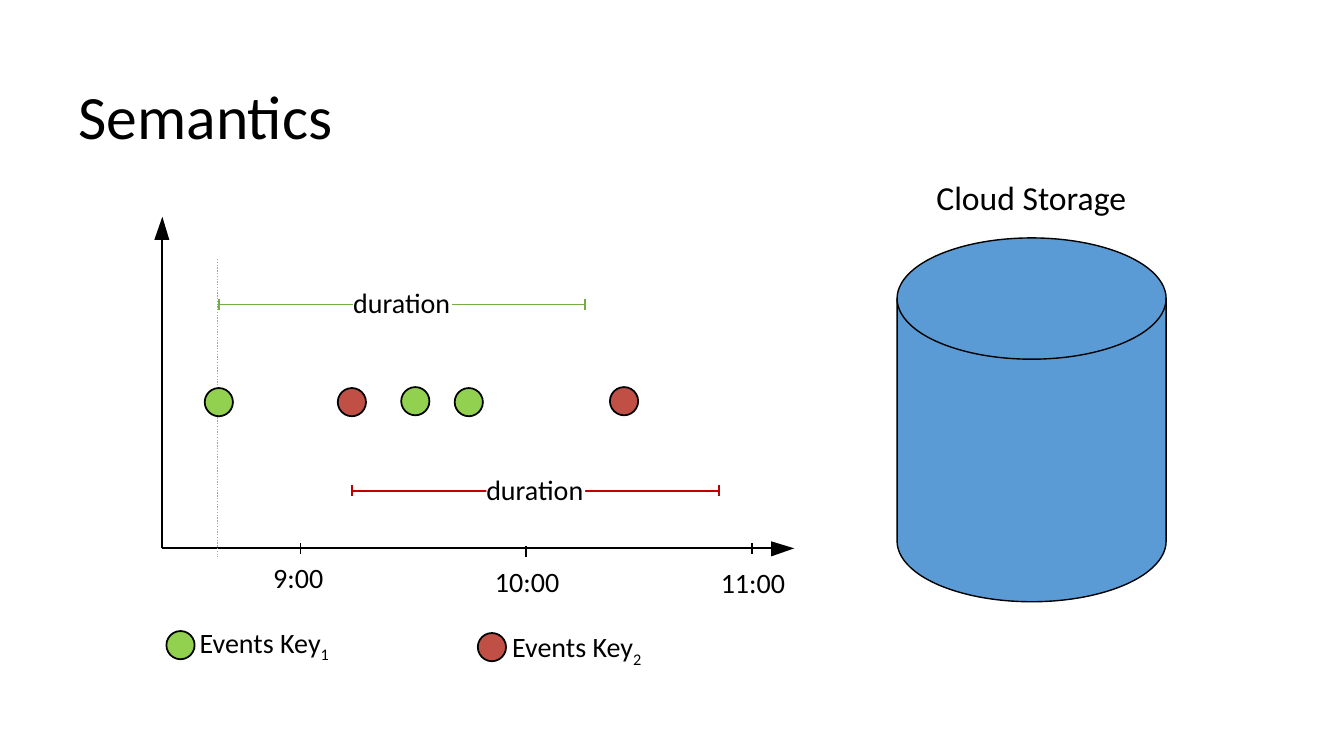
from dataclasses import dataclass

from lxml import etree
from pptx import Presentation
from pptx.dml.color import RGBColor
from pptx.enum.dml import MSO_LINE
from pptx.enum.shapes import MSO_CONNECTOR, MSO_SHAPE
from pptx.enum.text import MSO_ANCHOR, PP_ALIGN
from pptx.oxml.ns import qn
from pptx.util import Inches, Pt

STRAIGHT = MSO_CONNECTOR.STRAIGHT
DISK = MSO_SHAPE.FLOWCHART_MAGNETIC_DISK
OVAL = MSO_SHAPE.OVAL
DOTTED = MSO_LINE.ROUND_DOT
TOP, MIDDLE = MSO_ANCHOR.TOP, MSO_ANCHOR.MIDDLE
LEFT, CENTER = PP_ALIGN.LEFT, PP_ALIGN.CENTER

COLORS = {
    "ink": "000000", "paper": "FFFFFF", "guide": "A5A5A5", "storage": "5B9BD5",
    "key1": "92D050", "key2": "C05046", "span1": "70AD47", "span2": "C00000",
}
NO_INSETS = {"margin_left": 0, "margin_right": 0, "margin_top": 0, "margin_bottom": 0}
LINE_WIDTH = 1.25

# All lengths are percentages of the slide's width (x) and height (y)
DOT_WIDTH, DOT_HEIGHT = 2.1, 3.73
LABEL_HEIGHT = 4.53
ORIGIN_X, ORIGIN_Y = 12.08, 72.53
FIRST_HOUR_X, HOUR_STEP = 22.35, 16.8
TICK_LENGTH = 1.46


@dataclass
class Event:
    x: float
    y: float
    key: str


@dataclass
class Duration:
    start: float
    end: float
    y: float
    color: str


@dataclass
class Hour:
    text: str
    tick_y: float
    label_x: float
    label_y: float


@dataclass
class LegendKey:
    dot: Event
    text_x: float
    text_y: float
    number: str


EVENTS = [
    Event(45.38, 51.2, "key2"), Event(25.13, 51.33, "key2"),
    Event(33.83, 51.33, "key1"), Event(29.85, 51.2, "key1"),
    Event(15.23, 51.33, "key1"),
]
DURATIONS = [
    Duration(16.28, 43.5, 40.27, "span1"),
    Duration(26.18, 53.48, 64.93, "span2"),
]
HOURS = [
    Hour("9:00", 71.87, 20.33, 74.13),
    Hour("10:00", 72.27, 36.83, 74.67),
    Hour("11:00", 71.87, 53.63, 74.8),
]
LEGEND = [
    LegendKey(Event(12.38, 83.47, "key1"), 14.85, 82.8, "1"),
    LegendKey(Event(35.55, 83.73, "key2"), 38.1, 83.33, "2"),
]
ARROWHEADS = [
    [(57.38, 71.6), (59.1, ORIGIN_Y), (57.38, 73.6)],
    [(11.48, 31.73), (ORIGIN_X, 28.67), (12.6, 31.73)],
]

deck = Presentation()
deck.slide_width, deck.slide_height = Inches(13.33), Inches(7.5)
slide = deck.slides.add_slide(deck.slide_layouts[6])
shapes = slide.shapes


def across(share: float) -> int:
    return round(deck.slide_width * share / 100)


def down(share: float) -> int:
    return round(deck.slide_height * share / 100)


def color(name: str) -> RGBColor:
    return RGBColor.from_string(COLORS[name])


def area(x: float, y: float, width: float, height: float) -> tuple:
    return across(x), down(y), across(width), down(height)


def set_font(run, size: float) -> None:
    for name, value in {"name": "Calibri", "size": Pt(size)}.items():
        setattr(run.font, name, value)
    run.font.color.rgb = color("ink")


def add_text(place: tuple, text: str, size: float = 20, anchor=TOP, align=LEFT,
             insets: dict = NO_INSETS, fill: str = "", subscript: str = ""):
    box = shapes.add_textbox(*area(*place))
    if fill:
        box.fill.solid()
        box.fill.fore_color.rgb = color(fill)
    frame = box.text_frame
    for name, value in {"word_wrap": True, "vertical_anchor": anchor, **insets}.items():
        setattr(frame, name, value)
    paragraph = frame.paragraphs[0]
    paragraph.alignment = align
    run = paragraph.add_run()
    run.text = text
    set_font(run, size)
    if subscript:
        lowered = paragraph.add_run()
        lowered.text = subscript
        set_font(lowered, size)
        lowered.font._element.set("baseline", "-25000")
    return paragraph


def add_line(x1: float, y1: float, x2: float, y2: float, line_color: str = "ink",
             width: float = LINE_WIDTH, dash=None) -> None:
    connector = shapes.add_connector(STRAIGHT, across(x1), down(y1), across(x2), down(y2))
    connector.line.color.rgb = color(line_color)
    connector.line.width = Pt(width)
    if dash:
        connector.line.dash_style = dash
    etree.SubElement(connector._element.spPr, qn("a:effectLst"))


def add_solid(kind, place: tuple, fill: str, width: float = LINE_WIDTH) -> None:
    solid = shapes.add_shape(kind, *area(*place))
    solid.shadow.inherit = False
    solid.fill.solid()
    solid.fill.fore_color.rgb = color(fill)
    solid.line.color.rgb = color("ink")
    solid.line.width = Pt(width)


def add_event(event: Event) -> None:
    add_solid(OVAL, (event.x, event.y, DOT_WIDTH, DOT_HEIGHT), event.key)


def add_arrowhead(corners: list) -> None:
    points = [(across(x), down(y)) for x, y in corners]
    builder = shapes.build_freeform(*points[0])
    builder.add_line_segments(points[1:], close=True)
    head = builder.convert_to_shape()
    head.shadow.inherit = False
    head.fill.solid()
    head.fill.fore_color.rgb = color("ink")
    head.line.fill.background()


def add_duration(span: Duration) -> None:
    add_line(span.start, span.y, span.end, span.y, span.color)
    add_text((span.start + 10, span.y - 2.47, 7.35, LABEL_HEIGHT), "duration", fill="paper")
    for x in (span.start, span.end):
        add_line(x, span.y - TICK_LENGTH / 2, x, span.y + TICK_LENGTH / 2, span.color)


# Storage and title
add_solid(DISK, (66.75, 31.47, 20.02, 48.13), "storage", 1)
title = add_text((5.1, 6.13, 89.93, 19.33), "Semantics", 44, MIDDLE, insets={})
title.line_spacing = 0.9
add_text((68.18, 22.8, 17.1, 6.67), "Cloud Storage", 24, align=CENTER, insets={})

# Axes
add_line(ORIGIN_X, ORIGIN_Y, 57.53, ORIGIN_Y)
add_line(ORIGIN_X, ORIGIN_Y, ORIGIN_X, 31.47)
for arrowhead in ARROWHEADS:
    add_arrowhead(arrowhead)
for index, hour in enumerate(HOURS):
    tick_x = FIRST_HOUR_X + index * HOUR_STEP
    add_line(tick_x, hour.tick_y, tick_x, hour.tick_y + TICK_LENGTH)
    add_text((hour.label_x, hour.label_y, 6, LABEL_HEIGHT), hour.text)

# Durations and events
add_line(16.2, 34.27, 16.2, 73.6, "guide", 1, DOTTED)
for duration in DURATIONS:
    add_duration(duration)
for occurrence in EVENTS:
    add_event(occurrence)

# Legend
for key in LEGEND:
    add_event(key.dot)
    add_text((key.text_x, key.text_y, 10.13, LABEL_HEIGHT), "Events Key", subscript=key.number)

deck.save("out.pptx")
